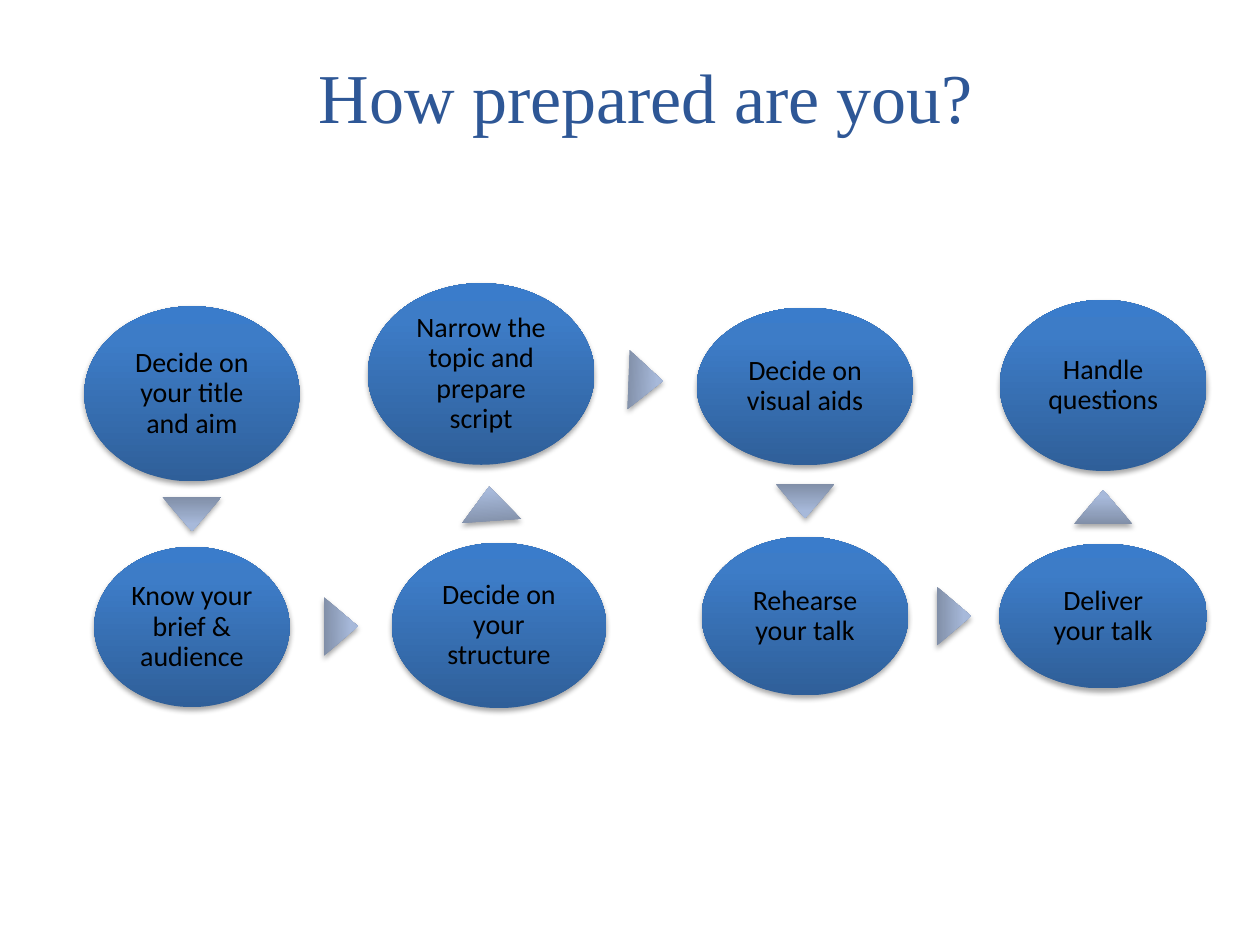
from itertools import pairwise
from math import atan2, degrees, hypot

from lxml import etree
from pptx import Presentation
from pptx.dml.color import RGBColor
from pptx.enum.shapes import MSO_SHAPE as Shape
from pptx.enum.text import MSO_ANCHOR as Anchor, PP_ALIGN as Align
from pptx.oxml import parse_xml
from pptx.oxml.ns import nsdecls, qn
from pptx.util import Cm, Pt

# Content: text lines, centre x, centre y, width, height (cm), in step order
TITLE = "How prepared are you?"
STEPS = [
    (["Decide on your title and aim"], 3.87, 7.94, 4.34, 3.53),
    (["Know your brief & audience"], 3.87, 12.64, 3.94, 3.23),
    (["Decide on", "your", "structure"], 10.06, 12.61, 4.32, 3.33),
    (["Narrow the topic and prepare script"], 9.7, 7.54, 4.57, 3.66),
    (["Decide on visual aids"], 16.23, 7.79, 4.37, 3.18),
    (["Rehearse your talk"], 16.23, 12.42, 4.17, 3.2),
    (["Deliver", "your talk"], 22.24, 12.42, 4.19, 2.92),
    (["Handle questions"], 22.24, 7.77, 4.17, 3.45),
]
ARROW_W, ARROW_H = 1.19, 0.69

# Colours; gradients run from the bottom up
TITLE_BLUE = RGBColor(0x2E, 0x57, 0x96)
BLACK = RGBColor(0, 0, 0)
OVAL_GRADIENT = [
    (0, RGBColor(0x2F, 0x5F, 0x99)),
    (80, RGBColor(0x3D, 0x7C, 0xC7)),
    (100, RGBColor(0x3A, 0x7C, 0xCB)),
]
ARROW_GRADIENT = [
    (0, RGBColor(0x81, 0x8F, 0xA8)),
    (80, RGBColor(0xA7, 0xB9, 0xDA)),
    (100, RGBColor(0xA7, 0xBA, 0xDC)),
]


def add_shaded(group, kind, cx, cy, w, h, gradient):
    """Add a borderless shape around a centre, with gradient and soft shadow."""
    sp = group.shapes.add_shape(kind, Cm(cx - w / 2), Cm(cy - h / 2), Cm(w), Cm(h))
    sp.line.fill.background()
    sp.fill.gradient()
    grad = sp.fill._xPr.find(qn("a:gradFill"))
    stops = "".join(
        f'<a:gs pos="{pos * 1000}"><a:srgbClr val="{color}"/></a:gs>'
        for pos, color in gradient
    )
    grad.replace(
        grad.find(qn("a:gsLst")),
        parse_xml(f'<a:gsLst {nsdecls("a")}>{stops}</a:gsLst>'),
    )
    grad.find(qn("a:lin")).set("ang", "16200000")

    sp.shadow.inherit = False
    effects = sp._element.spPr.find(qn("a:effectLst"))
    shadow = etree.SubElement(
        effects, qn("a:outerShdw"), blurRad=str(Pt(3.1)), dist=str(Pt(1.8)),
        dir="5400000", rotWithShape="0",
    )
    color = etree.SubElement(shadow, qn("a:srgbClr"), val="000000")
    etree.SubElement(color, qn("a:alpha"), val="35000")
    return sp


def add_step(group, lines, cx, cy, w, h):
    tf = add_shaded(group, Shape.OVAL, cx, cy, w, h, OVAL_GRADIENT).text_frame
    tf.word_wrap = True
    tf.vertical_anchor = Anchor.MIDDLE
    tf.margin_left = tf.margin_right = tf.margin_top = tf.margin_bottom = Cm(0.05)
    p = tf.paragraphs[0]
    p.alignment = Align.CENTER
    p.line_spacing = 0.9
    for i, line in enumerate(lines):
        if i:
            p.add_line_break()
        r = p.add_run()
        r.text = line
        r.font.name, r.font.size = "Calibri", Pt(16)
        r.font.color.rgb = BLACK


def add_arrow(group, start, end):
    """Point a triangle from start to end, midway in the gap between the ovals."""
    _, x1, y1, w1, h1 = start
    _, x2, y2, w2, h2 = end
    dist = hypot(x2 - x1, y2 - y1)
    ux, uy = (x2 - x1) / dist, (y2 - y1) / dist
    edge1 = 1 / hypot(2 * ux / w1, 2 * uy / h1)
    edge2 = 1 / hypot(2 * ux / w2, 2 * uy / h2)
    mid = (edge1 + dist - edge2) / 2
    sp = add_shaded(group, Shape.ISOSCELES_TRIANGLE, x1 + ux * mid, y1 + uy * mid,
                    ARROW_W, ARROW_H, ARROW_GRADIENT)
    sp.rotation = degrees(atan2(ux, -uy)) % 360


def main():
    prs = Presentation()
    prs.slide_width, prs.slide_height = Cm(25.4), Cm(19.05)
    s = prs.slides.add_slide(prs.slide_layouts[5])

    # Title
    title = s.shapes.title
    title.left, title.top, title.width, title.height = Cm(2.54), Cm(1.07), Cm(20.96), Cm(1.7)
    tf = title.text_frame
    tf.margin_left = tf.margin_right = tf.margin_top = tf.margin_bottom = 0
    p = tf.paragraphs[0]
    p.alignment = Align.CENTER
    r = p.add_run()
    r.text = TITLE
    r.font.name, r.font.size = "Times New Roman", Pt(40)
    r.font.color.rgb = TITLE_BLUE

    # Chain of steps
    group = s.shapes.add_group_shape()
    for step in STEPS:
        add_step(group, *step)
    for start, end in pairwise(STEPS):
        add_arrow(group, start, end)

    prs.save("out.pptx")


if __name__ == "__main__":
    main()
